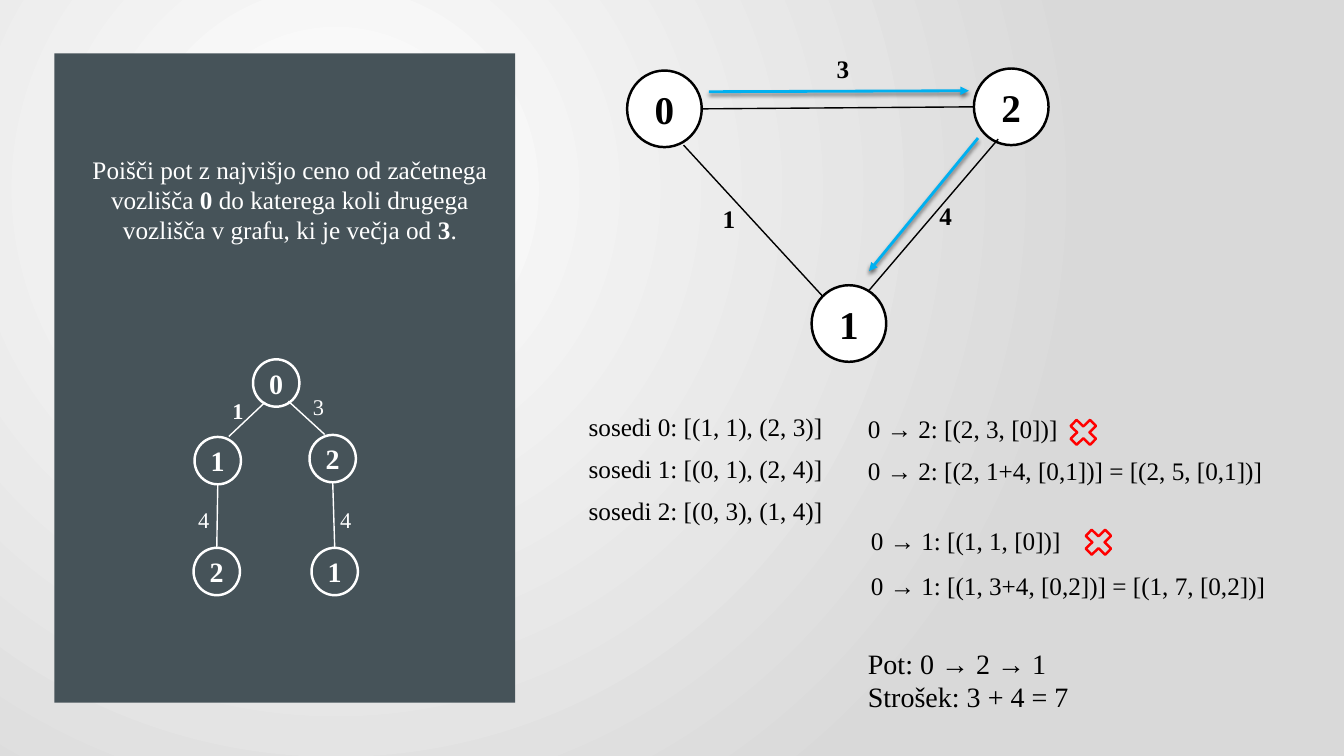
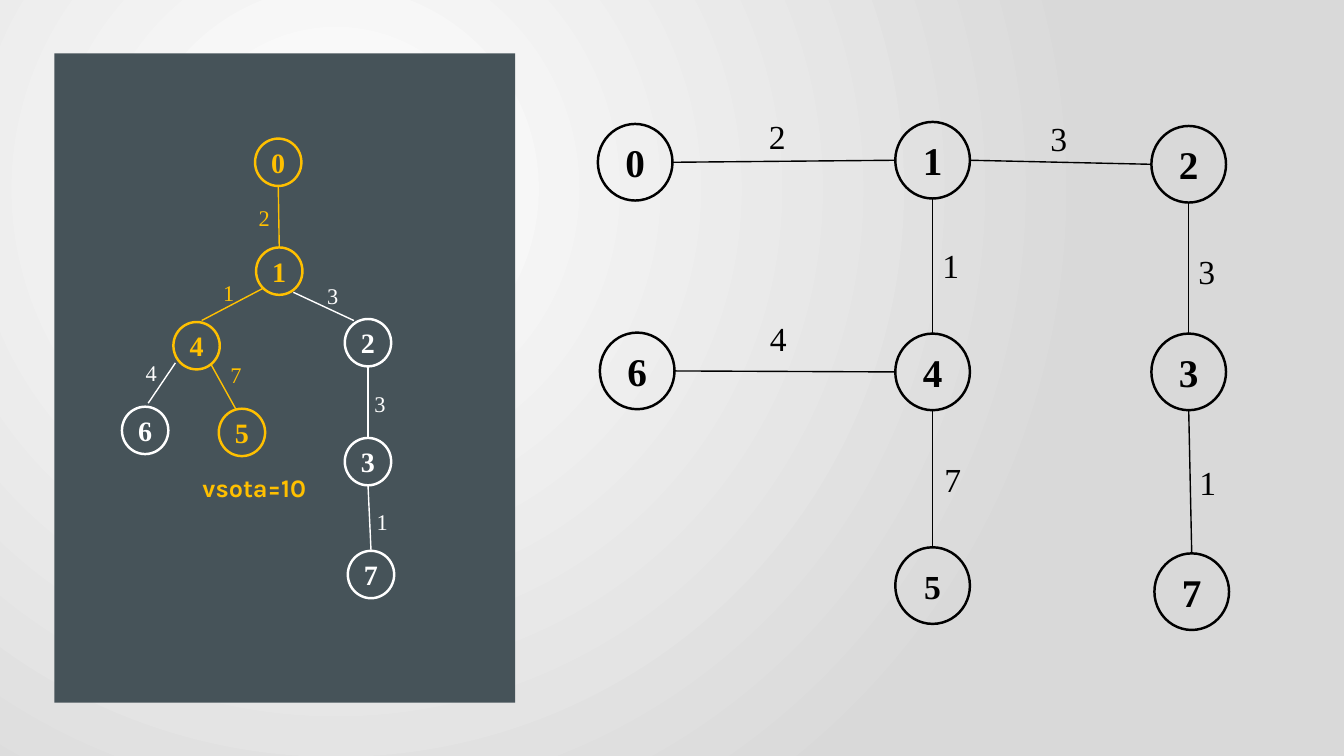
from lxml.etree import SubElement
from pptx import Presentation
from pptx.dml.color import RGBColor
from pptx.enum.shapes import MSO_CONNECTOR as Link, MSO_SHAPE as Preset
from pptx.enum.text import MSO_ANCHOR as Anchor, PP_ALIGN as Align
from pptx.oxml.ns import qn
from pptx.util import Inches, Pt

CELL = 0.1  # side of one grid square, in inches
COLUMNS, ROWS = 133.3, 75
BLACK, WHITE, SLATE = "000000", "FFFFFF", "465359"
GOLD, BLUE, RED, SILVER = "FFC000", "00B0F0", "FF0000", "D9D9D9"
SERIF = "Times New Roman"


def cells(*counts):
    """Lengths of the given numbers of grid columns or rows."""
    return [Inches(round(count * CELL, 4)) for count in counts]


def color(code):
    return RGBColor.from_string(code)


def write(frame, text, size=18, ink=BLACK, font=SERIF, bold=False,
          align=Align.LEFT, anchor=Anchor.TOP, inset=(1, 0.5), wrap=True, gap=0):
    """Fill a text frame: a line is a paragraph, *stars* switch bold."""
    frame.word_wrap = wrap
    frame.vertical_anchor = anchor
    frame.margin_left = frame.margin_right = cells(inset[0])[0]
    frame.margin_top = frame.margin_bottom = cells(inset[1])[0]
    for number, line in enumerate(text.split("\n")):
        para = frame.add_paragraph() if number else frame.paragraphs[0]
        para.alignment = align
        para.space_after = Pt(gap)
        for turn, piece in enumerate(line.split("*")):
            if piece:
                span = para.add_run()
                span.text = piece
                span.font.name, span.font.size = font, Pt(size)
                span.font.bold = bold or turn % 2 == 1
                span.font.color.rgb = color(ink)


class Board:
    """Holds the style and the current slide; places are grid columns and rows."""
    centred = dict(align=Align.CENTER, anchor=Anchor.MIDDLE, inset=(0, 0), wrap=False)

    def __init__(self):
        self.deck = Presentation()
        self.deck.slide_width, self.deck.slide_height = cells(COLUMNS, ROWS)
        self.page = None

    def new_page(self):
        self.page = self.deck.slides.add_slide(self.deck.slide_layouts[6])
        self.backdrop()
        self.shape(Preset.RECTANGLE, 5.4, 5.3, 45.7, 64.4, fill=SLATE)

    def backdrop(self):
        """Circular gradient around the upper left quarter."""
        fill = self.page.background.fill
        fill.gradient()
        for stop, code in zip(fill.gradient_stops, (WHITE, SILVER)):
            stop.color.rgb = color(code)
        gradient = next(self.page.element.iter(qn("a:gradFill")))
        gradient.remove(gradient.find(qn("a:lin")))
        circle = SubElement(gradient, qn("a:path"), {"path": "circle"})
        SubElement(circle, qn("a:fillToRect"), l="50000", t="50000", r="100000", b="100000")

    def shape(self, preset, left, top, width, height, fill=None, ink=None):
        shape = self.page.shapes.add_shape(preset, *cells(left, top, width, height))
        shape.shadow.inherit = False
        if fill:
            shape.fill.solid()
            shape.fill.fore_color.rgb = color(fill)
        else:
            shape.fill.background()
        if ink:
            shape.line.color.rgb = color(ink)
            shape.line.width = Pt(1.75)
        else:
            shape.line.fill.background()
        return shape

    def node(self, name, x, y, wide, high, size, ink, fill=None):
        circle = self.shape(Preset.OVAL, x - wide / 2, y - high / 2, wide, high, fill, ink)
        write(circle.text_frame, name, size=size, ink=ink, bold=True, **self.centred)
        return circle

    def graph_node(self, name, x, y, size=28, fill=None):
        return self.node(name, x, y, 7.4, 7.6, size, BLACK, fill)

    def tree_node(self, name, x, y, ink=WHITE):
        return self.node(name, x, y, 4.6, 4.7, 20, ink)

    def line(self, x1, y1, x2, y2, ink=BLACK, width=1):
        line = self.page.shapes.add_connector(Link.STRAIGHT, *cells(x1, y1, x2, y2))
        line.line.color.rgb = color(ink)
        line.line.width = Pt(width)
        SubElement(line.element.spPr, qn("a:effectLst"))
        return line

    def join(self, start, end, ink=BLACK):
        """Edge between facing sides of two nodes, downwards or to the right."""
        down = end.top - start.top > end.left - start.left
        line = self.line(0, 0, 1, 1, ink)
        line.begin_connect(start, 2 if down else 3)
        line.end_connect(end, 0 if down else 1)
        # An ellipse has eight connection sites, a rectangle four
        for site in line.element.iter(qn("a:stCxn"), qn("a:endCxn")):
            site.set("idx", str(2 * int(site.get("idx"))))

    def arrow(self, *ends):
        line = self.line(*ends, ink=BLUE, width=2)
        outline = line.element.spPr.find(qn("a:ln"))
        SubElement(outline, qn("a:tailEnd"), type="triangle")
        effects = line.element.spPr.find(qn("a:effectLst"))
        shadow = SubElement(effects, qn("a:outerShdw"), blurRad="38100", dist="25400",
                            dir="5400000", rotWithShape="0")
        tone = SubElement(shadow, qn("a:srgbClr"), val=BLACK)
        SubElement(tone, qn("a:alpha"), val="55000")

    def text(self, left, top, width, height, text, **style):
        box = self.page.shapes.add_textbox(*cells(left, top, width, height))
        write(box.text_frame, text, **style)

    def label(self, text, x, y, **style):
        """Weight of an edge, centred on a point."""
        self.text(x - 2, y - 2, 4, 4, text, **style, **self.centred)

    def cross(self, left, top):
        self.shape(Preset.MATH_MULTIPLY, left, top, 3.7, 3.6, ink=RED)


def costly_path(board):
    board.new_page()

    # Graph
    nodes = {name: board.graph_node(name, x, y, fill=WHITE) for name, x, y in (
        ("0", 65.9, 10.8), ("2", 100.3, 10.6), ("1", 84.2, 32.1))}
    board.join(nodes["0"], nodes["2"])
    board.line(67.8, 14.4, 81.6, 29.4)
    board.line(99, 13.8, 86.2, 28.8)
    for weight, x, y in (("3", 83.6, 6.8), ("4", 93.8, 21.4), ("1", 72.3, 21.7)):
        board.label(weight, x, y, bold=True)
    board.arrow(70.3, 9.1, 96.1, 9)
    board.arrow(97, 13.7, 86.2, 26.9)

    # Task and search tree on the panel
    board.text(7.2, 14.8, 43.1, 10.1,
               "Poišči pot z najvišjo ceno od začetnega vozlišča *0* do katerega koli "
               "drugega vozlišča v grafu, ki je večja od *3*.",
               ink=WHITE, align=Align.CENTER)
    board.tree_node("0", 27.4, 38)
    left, right, left_leaf, right_leaf = [board.tree_node(*place) for place in (
        ("1", 21.6, 45.7), ("2", 33, 45.5), ("2", 21.5, 56.7), ("1", 33.2, 56.7))]
    board.line(26.3, 39.9, 22.7, 43.3, WHITE)
    board.line(28.6, 39.8, 32.2, 43.1, WHITE)
    board.join(left, left_leaf, WHITE)
    board.join(right, right_leaf, WHITE)
    for weight, x, y in (("*1*", 23.6, 40.7), ("3", 31.6, 40.3),
                         ("4", 20.2, 51.5), ("4", 34.3, 51.5)):
        board.label(weight, x, y, size=16, ink=WHITE)

    # Neighbours, costs and result
    board.text(57.4, 40.3, 27.7, 12.1,
               "sosedi 0: [(1, 1), (2, 3)]\nsosedi 1: [(0, 1), (2, 4)]\n"
               "sosedi 2: [(0, 3), (1, 4)]", gap=8.5)
    board.text(85.1, 40.5, 43, 8.1,
               "0 → 2: [(2, 3, [0])]\n0 → 2: [(2, 1+4, [0,1])] = [(2, 5, [0,1])]", gap=8.5)
    board.text(85.4, 51.6, 43, 8.4,
               "0 → 1: [(1, 1, [0])]\n0 → 1: [(1, 3+4, [0,2])] = [(1, 7, [0,2])]", gap=10.5)
    board.cross(105.6, 41.1)
    board.cross(107.1, 52)
    board.text(85.1, 63.6, 43, 7.7, "Pot: 0 → 2 → 1\nStrošek: 3 + 4 = 7", size=20)


def larger_graph(board):
    board.new_page()

    # Search tree, best path in gold
    tree = {place[0]: board.tree_node(*place) for place in (
        ("0", 27.6, 16.1, GOLD), ("1", 27.7, 26.9, GOLD), ("4", 19.5, 34.3, GOLD),
        ("5", 24, 42.9, GOLD), ("6", 14.4, 42.7), ("2", 36.5, 34),
        ("3", 36.5, 45.8), ("7", 36.8, 57))}
    for start, end, ink in (("0", "1", GOLD), ("2", "3", WHITE), ("3", "7", WHITE)):
        board.join(tree[start], tree[end], ink)
    for *ends, ink in ((26.1, 28.6, 20, 31.8, GOLD), (29.1, 29, 35.1, 31.8, WHITE),
                       (17.4, 36, 14.7, 40, WHITE), (20.9, 36.1, 23.4, 40.6, GOLD)):
        board.line(*ends, ink=ink)
    for weight, x, y, ink in (
            ("2", 26.2, 21.6, GOLD), ("1", 22.7, 29, GOLD), ("7", 23.4, 37.2, GOLD),
            ("4", 15, 37, WHITE), ("3", 33, 29.3, WHITE), ("3", 37.7, 40, WHITE),
            ("1", 37.9, 51.7, WHITE)):
        board.label(weight, x, y, size=16, ink=ink)
    board.text(19.1, 46.4, 14, 4, "vsota=10", font="Karla", ink=GOLD, bold=True)

    # Graph
    graph = {place[0]: board.graph_node(*place) for place in (
        ("0", 63, 16.1), ("1", 92.5, 15.9), ("2", 117.9, 16.3),
        ("6", 63.2, 36.8), ("4", 92.5, 36.9), ("3", 117.9, 36.9),
        ("5", 92.5, 58.1, 24), ("7", 118.2, 58.7))}
    for start, end, weight, x, y in (
            ("0", "1", "2", 77.1, 13.5), ("1", "2", "3", 105, 13.7),
            ("1", "4", "1", 94.3, 26.3), ("2", "3", "3", 119.7, 26.9),
            ("6", "4", "4", 77.2, 33.5), ("4", "5", "7", 94.5, 47.5),
            ("3", "7", "1", 119.8, 47.8)):
        board.join(graph[start], graph[end])
        board.label(weight, x, y, size=24)


def main():
    board = Board()
    costly_path(board)
    larger_graph(board)
    board.deck.save("out.pptx")


if __name__ == "__main__":
    main()
